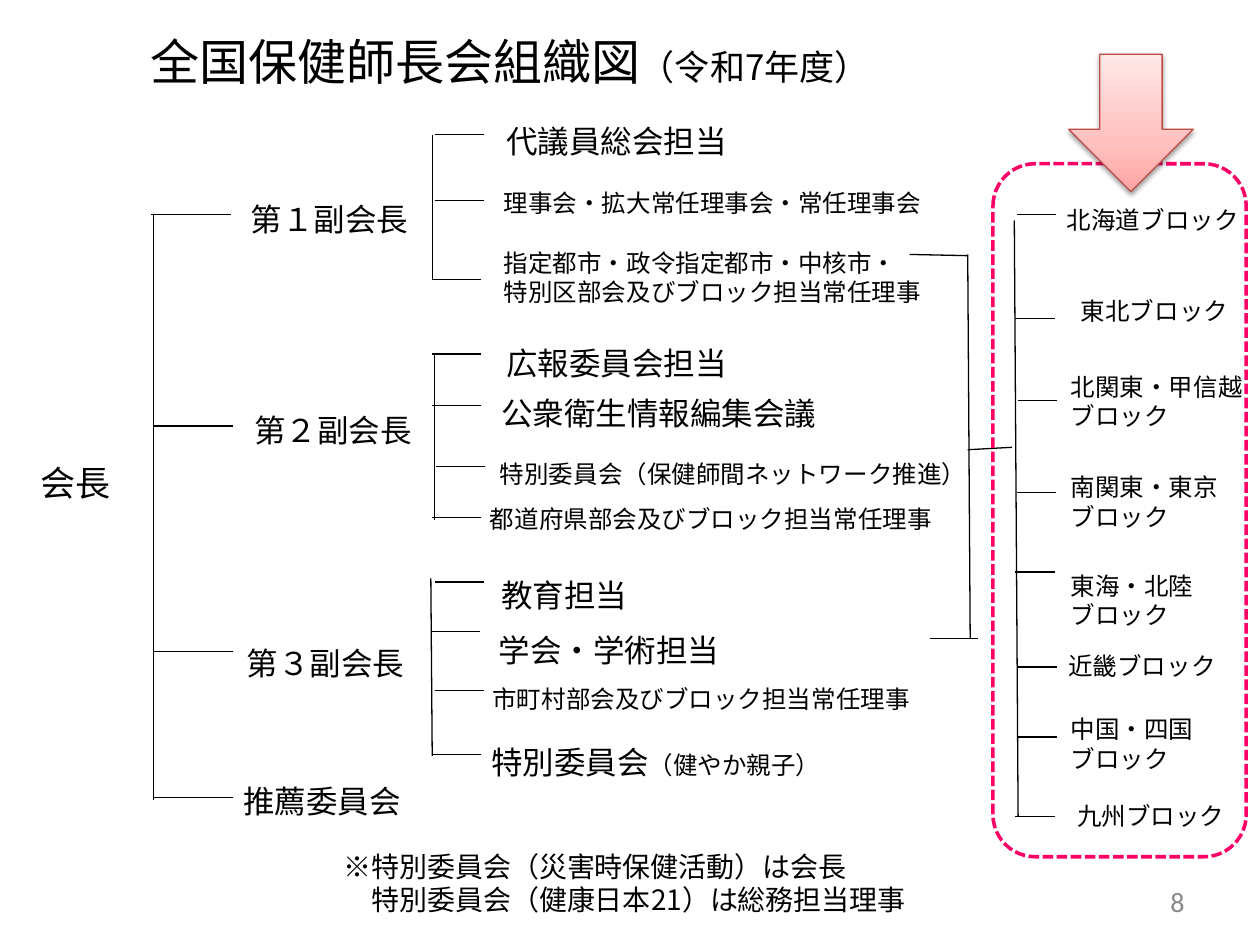
from lxml.etree import SubElement
from pptx import Presentation
from pptx.dml.color import RGBColor
from pptx.enum.dml import MSO_LINE
from pptx.enum.shapes import MSO_CONNECTOR, MSO_SHAPE
from pptx.enum.text import MSO_ANCHOR, MSO_AUTO_SIZE, PP_ALIGN
from pptx.oxml.ns import qn
from pptx.util import Pt

COLORS = {
    "text": "000000", "number": "898989", "frame": "FF0066",
    "arrow_line": "BF4C48", "arrow_dark": "FFA6A5",
    "arrow_mid": "FFC0BF", "arrow_light": "FFE7E7", "shadow": "000000",
}
JAPANESE = "Noto Sans CJK JP"


def rgb(name):
    return RGBColor.from_string(COLORS[name])


def add_text(page, text, left, top, width, height=None, size=18, color="text",
             font=JAPANESE, align=PP_ALIGN.LEFT, anchor=MSO_ANCHOR.TOP,
             wrap=True, grow=True, second_indent=0, tail="", tail_size=14):
    """Add a text box; each line is a paragraph, and tail is a smaller last run."""
    lines = text.split("\n")
    height = height or len(lines) * size * 1.2 + 7.2
    box = page.shapes.add_textbox(Pt(left), Pt(top), Pt(width), Pt(height))
    frame = box.text_frame
    frame.word_wrap = wrap
    frame.vertical_anchor = anchor
    frame.auto_size = MSO_AUTO_SIZE.SHAPE_TO_FIT_TEXT if grow else MSO_AUTO_SIZE.NONE
    for index, line in enumerate(lines):
        para = frame.add_paragraph() if index else frame.paragraphs[0]
        para.alignment = align
        if index and second_indent:
            para._p.get_or_add_pPr().set("marL", str(Pt(second_indent)))
        for words, points in ((line, size), (tail, tail_size)):
            if not words:
                continue
            span = para.add_run()
            span.text = words
            span.font.size = Pt(points)
            span.font.color.rgb = rgb(color)
            span.font.name = font
            SubElement(span._r.get_or_add_rPr(), qn("a:ea"), typeface=font)
    return box


def add_line(page, x1, y1, x2, y2):
    line = page.shapes.add_connector(
        MSO_CONNECTOR.STRAIGHT, Pt(x1), Pt(y1), Pt(x2), Pt(y2))
    line.line.color.rgb = rgb("text")
    line.line.width = Pt(0.75)
    SubElement(line._element.spPr, qn("a:effectLst"))


def add_bracket(page, box, tick_length, rows, lean=0):
    """Draw a spine with one tick and one label per row.

    Each row holds tick x and y, label x and y, label width, text and format,
    all measured from the top left of the box.
    """
    left, top, height = box
    add_line(page, left, top, left + lean, top + height)
    for tick_x, tick_y, label_x, label_y, width, text, style in rows:
        start, level = left + tick_x, top + tick_y
        add_line(page, start, level, start + tick_length, level)
        add_text(page, text, left + label_x, top + label_y, width, **style)


def add_link(page, box):
    """Join the two halves of the board to the regional blocks."""
    left, top, width, height = box
    spine = left + 33.2
    add_line(page, left, top, spine, top + 0.7)
    add_line(page, left + 11.6, top + height, left + 39, top + height)
    add_line(page, spine, top, spine + 1.4, top + height)
    add_line(page, spine, top + 111.6, left + width, top + 110.2)


def add_frame(page, box):
    frame = page.shapes.add_shape(
        MSO_SHAPE.FLOWCHART_ALTERNATE_PROCESS, *map(Pt, box))
    frame.shadow.inherit = False
    frame.fill.background()
    frame.line.color.rgb = rgb("frame")
    frame.line.width = Pt(2)
    frame.line.dash_style = MSO_LINE.SQUARE_DOT


def add_arrow(page, box):
    arrow = page.shapes.add_shape(MSO_SHAPE.DOWN_ARROW, *map(Pt, box))
    arrow.shadow.inherit = False
    arrow.line.color.rgb = rgb("arrow_line")
    arrow.line.width = Pt(0.75)
    # Three-stop gradient, darkest at the bottom
    arrow.fill.gradient()
    gradient = arrow._element.spPr.find(qn("a:gradFill"))
    for child in list(gradient):
        gradient.remove(child)
    stops = SubElement(gradient, qn("a:gsLst"))
    for percent, name in ((0, "arrow_dark"), (35, "arrow_mid"), (100, "arrow_light")):
        stop = SubElement(stops, qn("a:gs"), pos=str(percent * 1000))
        SubElement(stop, qn("a:srgbClr"), val=COLORS[name])
    SubElement(gradient, qn("a:lin"), ang="16200000", scaled="1")
    # Soft shadow below
    effects = arrow._element.spPr.find(qn("a:effectLst"))
    shadow = SubElement(effects, qn("a:outerShdw"), blurRad=str(Pt(3.1)),
                        dist=str(Pt(1.6)), dir="5400000", rotWithShape="0")
    tint = SubElement(shadow, qn("a:srgbClr"), val=COLORS["shadow"])
    SubElement(tint, qn("a:alpha"), val="38000")


BIG, SMALL = {"size": 18}, {"size": 14}

OFFICERS = [
    (-1.4, 0, 48.3, -11.5, 142, "第１副会長", BIG),
    (0, 121, 50.4, 108.7, 142, "第２副会長", BIG),
    (0, 249.8, 46.1, 241.9, 142, "第３副会長", BIG),
    (0, 333.4, 44, 321.1, 142, "推薦委員会", BIG),
]
FIRST_DUTIES = [
    (1.4, 0, 35.2, -10.8, 215, "代議員総会担当", BIG),
    (1.4, 37.5, 33.8, 26.7, 262, "理事会・拡大常任理事会・常任理事会", SMALL),
    (0, 82.8, 33.8, 61.2, 259,
     "指定都市・政令指定都市・中核市・\n特別区部会及びブロック担当常任理事", SMALL),
]
SECOND_DUTIES = [
    (-1.4, 0, 33.8, -9.3, 193, "広報委員会担当", BIG),
    (-1.4, 29.5, 31, 19.5, 197, "公衆衛生情報編集会議", {"size": 18, "wrap": False}),
    (0.7, 64.1, 30.2, 56.2, 281, "特別委員会（保健師間ネットワーク推進）", SMALL),
    (-1.4, 93.6, 24.5, 82.1, 287, "都道府県部会及びブロック担当常任理事", SMALL),
]
THIRD_DUTIES = [
    (2.2, 2.1, 33.2, -5.1, 193, "教育担当", BIG),
    (0, 30.2, 31.7, 26.6, 224, "学会・学術担当", BIG),
    (2.2, 64.1, 28.1, 56.9, 275, "市町村部会及びブロック担当常任理事", SMALL),
    (0.8, 100.8, 27.4, 90.7, 254, "特別委員会", {"size": 18, "tail": "（健やか親子）"}),
]
BLOCKS = [
    (1.4, -3.6, 23, -12.2, 113.8, "北海道ブロック", SMALL),
    (0.7, 56.2, 31, 39.6, 105, "東北ブロック", SMALL),
    (2.2, 103, 25.2, 82.8, 113.8, "北関東・甲信越ブロック", SMALL),
    (1.4, 155.5, 25.2, 140.4, 113.8, "南関東・東京\nブロック", SMALL),
    (0.7, 200.9, 25.2, 196.6, 113.8, "東海・北陸\nブロック", SMALL),
    (2.2, 255.2, 23.8, 242.6, 105, "近畿ブロック", SMALL),
    (2.2, 295.2, 25.2, 278.6, 113.8, "中国・四国\nブロック", SMALL),
    (0.7, 340.6, 28.8, 328.3, 113.8, "九州ブロック", SMALL),
]


def build_chart_page(page):
    # Heading
    add_text(page, "全国保健師長会組織図", 25.2, 9.4, 532.8, 50.4, size=28,
             align=PP_ALIGN.CENTER, anchor=MSO_ANCHOR.MIDDLE, grow=False,
             tail="（令和7年度）", tail_size=20)
    # President, officers and their duties
    add_text(page, "会長", 9.4, 260, 67.7, size=20, align=PP_ALIGN.CENTER)
    add_bracket(page, (87.8, 122.4, 334.8), 45.4, OFFICERS)
    add_bracket(page, (247, 77, 82.8), 28.1, FIRST_DUTIES)
    add_bracket(page, (248.4, 202.3, 95), 28.1, SECOND_DUTIES)
    add_bracket(page, (246.2, 330.5, 101.5), 28.1, THIRD_DUTIES, lean=0.8)
    # Regional blocks
    add_link(page, (519.8, 145.4, 58.4, 219.6))
    add_bracket(page, (579.6, 126, 340.6), 22.4, BLOCKS, lean=2.2)
    add_frame(page, (567.4, 93.6, 144.7, 396))
    add_arrow(page, (610.6, 31, 71.3, 78.5))
    # Note and page number
    add_text(page, "※特別委員会（災害時保健活動）は会長\n"
             "特別委員会（健康日本21）は総務担当理事",
             189.4, 481.7, 375, 85, size=16, second_indent=16)
    add_text(page, "8", 516.2, 500.4, 167.8, 28.8, size=16, color="number",
             font="Calibri", align=PP_ALIGN.RIGHT, anchor=MSO_ANCHOR.MIDDLE,
             grow=False)


def main():
    deck = Presentation()
    deck.slide_width, deck.slide_height = Pt(720), Pt(540)
    build_chart_page(deck.slides.add_slide(deck.slide_layouts[6]))
    deck.save("out.pptx")


if __name__ == "__main__":
    main()
